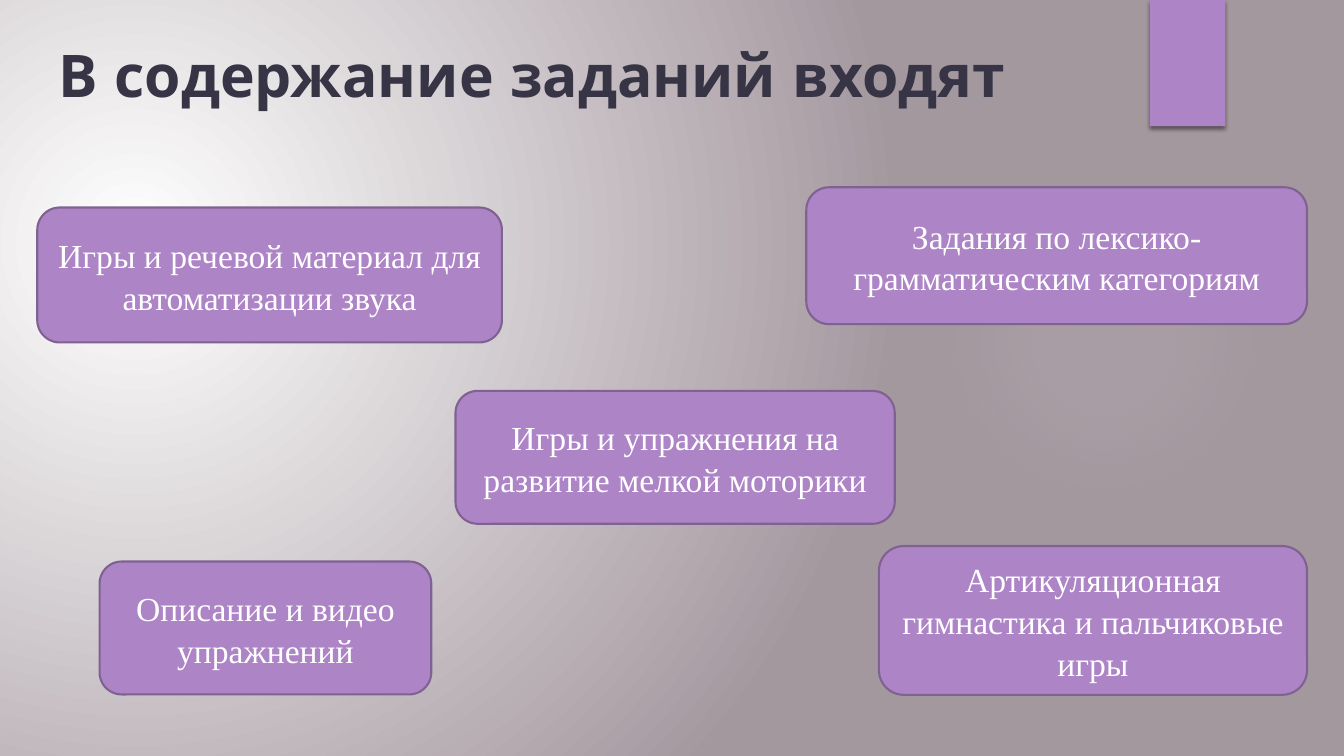
"""Build the slide listing what the speech therapy tasks contain."""
from lxml import etree
from pptx import Presentation
from pptx.dml.color import RGBColor
from pptx.enum import shapes, text
from pptx.oxml import parse_xml
from pptx.oxml.ns import nsdecls
from pptx.util import Cm, Pt

PURPLE = RGBColor(0xAD, 0x84, 0xC6)
OUTLINE = RGBColor(0x80, 0x62, 0x92)
DARK = RGBColor(0x37, 0x35, 0x45)
WHITE = RGBColor(0xFF, 0xFF, 0xFF)


def set_radial_fill(properties, stops, focus):
    """Replace a solid fill by a circular gradient of (position, colour, opacity)."""
    stop_xml = "".join(
        f'<a:gs pos="{position * 1000}"><a:srgbClr val="{colour}">'
        f'<a:alpha val="{opacity * 1000}"/></a:srgbClr></a:gs>'
        for position, colour, opacity in stops)
    sides = " ".join(f'{side}="{value * 1000}"' for side, value in zip("ltrb", focus))
    gradient = parse_xml(
        f'<a:gradFill {nsdecls("a")} rotWithShape="1"><a:gsLst>{stop_xml}</a:gsLst>'
        f'<a:path path="circle"><a:fillToRect {sides}/></a:path></a:gradFill>')
    solid = properties.find(".//{*}solidFill")
    solid.getparent().replace(solid, gradient)


def add_filled_shape(kind, left, top, width, height):
    """Add a purple shape without shadow or outline."""
    shape = slide.shapes.add_shape(kind, Cm(left), Cm(top), Cm(width), Cm(height))
    shape.shadow.inherit = False
    shape.fill.solid()
    shape.fill.fore_color.rgb = PURPLE
    shape.line.fill.background()
    return shape


presentation = Presentation()
presentation.slide_width = Cm(33.87)
presentation.slide_height = Cm(19.05)
slide = presentation.slides.add_slide(presentation.slide_layouts[6])

slide.background.fill.solid()
set_radial_fill(slide.element.cSld, [(0, "FFFFFF", 100), (100, "A4989F", 100)],
                (45, 65, 125, 100))

glow = add_filled_shape(shapes.MSO_SHAPE.OVAL, 23.9, 4.65, 7.82, 7.82)
set_radial_fill(glow.element.spPr,
                [(0, "EAE8EA", 7), (36, "EAE8EA", 6), (69, "EAE8EA", 0)],
                (50, 50, 50, 50))

ribbon = add_filled_shape(shapes.MSO_SHAPE.RECTANGLE, 28.98, 0, 1.9, 3.18)
effects = ribbon.element.spPr.find("{*}effectLst")
namespace = "{http://schemas.openxmlformats.org/drawingml/2006/main}"
shadow = etree.SubElement(effects, namespace + "outerShdw", blurRad=str(Pt(3)),
                          dist=str(Pt(2)), dir="5400000", rotWithShape="0")
shadow_colour = etree.SubElement(shadow, namespace + "srgbClr", val="000000")
etree.SubElement(shadow_colour, namespace + "alpha", val="45000")

title = slide.shapes.add_textbox(Cm(0.33), Cm(0.86), Cm(26.16), Cm(3.86))
title.text_frame.word_wrap = True
title.text_frame.text = "В содержание заданий входят"
paragraph = title.text_frame.paragraphs[0]
paragraph.alignment = text.PP_ALIGN.CENTER
font = paragraph.runs[0].font
font.name, font.size, font.bold = "Quicksand", Pt(42), True
font.color.rgb = DARK

cards = [
    ("Описание и видео упражнений", 2.51, 14.15, 8.36, 3.35),
    ("Игры и речевой материал для автоматизации звука", 0.94, 5.23, 11.71, 3.4),
    ("Задания по лексико-грамматическим категориям", 20.32, 4.72, 12.62, 3.45),
    ("Артикуляционная гимнастика и пальчиковые игры", 22.15, 13.76, 10.79, 3.75),
    ("Игры и упражнения на развитие мелкой моторики", 11.48, 9.85, 11.07, 3.35),
]
for label, left, top, width, height in cards:
    card = add_filled_shape(shapes.MSO_SHAPE.ROUNDED_RECTANGLE, left, top, width, height)
    card.line.color.rgb = OUTLINE
    card.line.width = Pt(1.5)
    card.text_frame.word_wrap = True
    card.text_frame.vertical_anchor = text.MSO_ANCHOR.MIDDLE
    card.text_frame.text = label
    paragraph = card.text_frame.paragraphs[0]
    paragraph.alignment = text.PP_ALIGN.CENTER
    paragraph.line_spacing = 1.04
    font = paragraph.runs[0].font
    font.name, font.size = "Times New Roman", Pt(24)
    font.color.rgb = WHITE

presentation.save("out.pptx")
